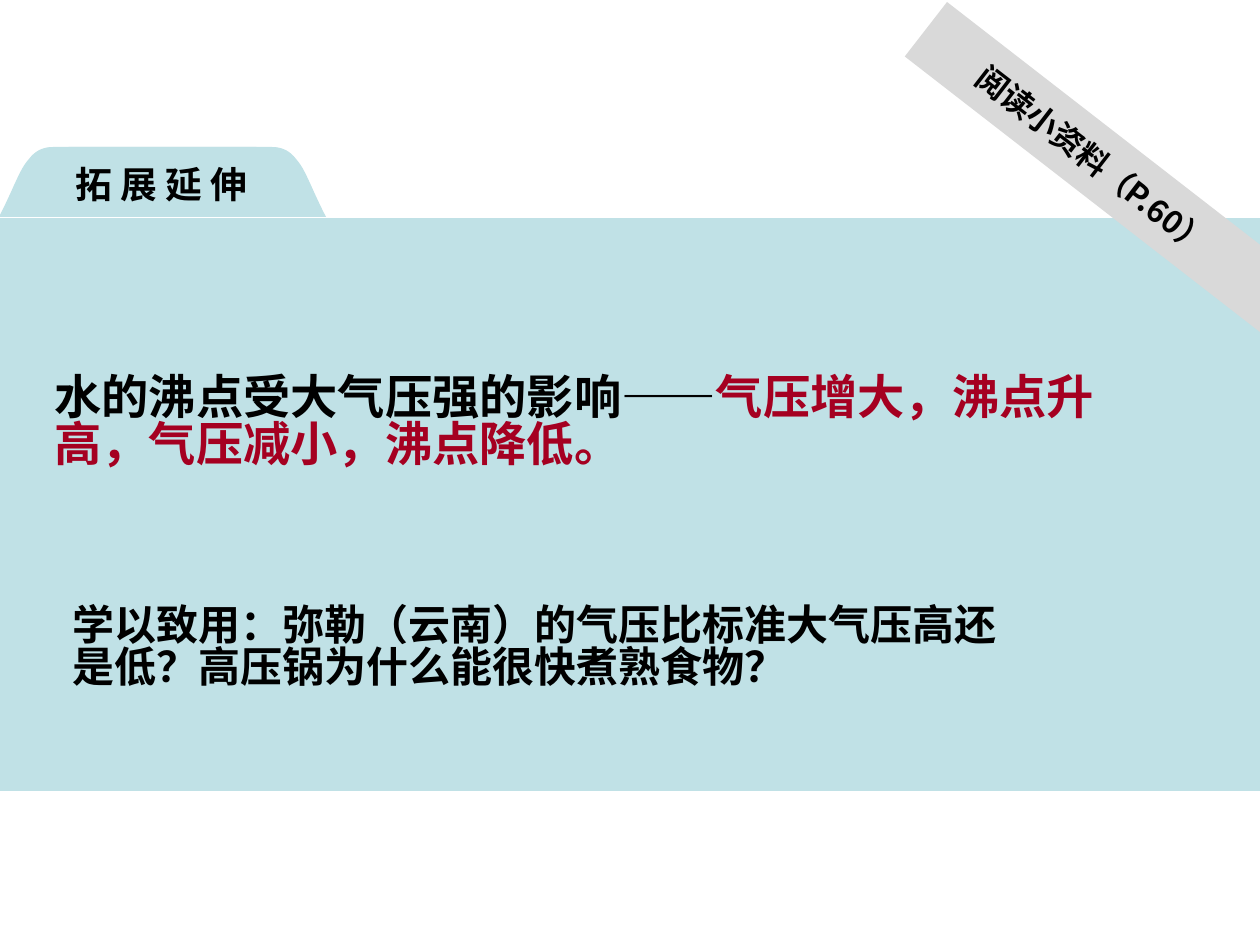
from lxml.etree import SubElement
from pptx import Presentation
from pptx.dml.color import RGBColor
from pptx.enum.shapes import MSO_SHAPE as Shape
from pptx.enum.text import MSO_ANCHOR as Anchor, PP_ALIGN as Align
from pptx.oxml.ns import qn
from pptx.util import Emu, Pt

PX = 914400 / 126
COLORS = {"panel": "C0E1E6", "ribbon": "D9D9D9", "text": "000000", "accent": "A50021"}
CJK = "Noto Sans CJK SC"
CURVE_STEPS = 12


def px(n):
    return Emu(round(n * PX))


def paint(sp, color):
    sp.shadow.inherit = False
    sp.fill.solid()
    sp.fill.fore_color.rgb = RGBColor.from_string(COLORS[color])
    sp.line.fill.background()


def add_run(p, text, size, color="text", font="Arial"):
    r = p.add_run()
    r.text = text
    r.font.size, r.font.bold, r.font.name = Pt(size), True, font
    r.font.color.rgb = RGBColor.from_string(COLORS[color])
    SubElement(r.font._element, qn("a:ea"), typeface=CJK)


def add_rect(slide, box, color):
    sp = slide.shapes.add_shape(Shape.RECTANGLE, *map(px, box))
    paint(sp, color)
    return sp


def add_text(slide, box, size, runs):
    """Place one paragraph of (text, color) runs, with tightened CJK lines."""
    tf = slide.shapes.add_textbox(*map(px, box)).text_frame
    tf.word_wrap = True
    tf.margin_top = px(12)
    p = tf.paragraphs[0]
    p.line_spacing = 0.83
    for text, color in runs:
        add_run(p, text, size, color)


def bezier(p0, p1, p2, p3):
    """Points along a cubic curve, without its start."""
    points = []
    for i in range(1, CURVE_STEPS + 1):
        t = i / CURVE_STEPS
        u = 1 - t
        points.append(tuple(
            u**3 * a + 3 * u * u * t * b + 3 * u * t * t * c + t**3 * d
            for a, b, c, d in zip(p0, p1, p2, p3)))
    return points


def add_tab(slide, box):
    """Two mirrored, overlapping halves form the tab, with its label on top."""
    left, top, width, height = box
    outline = [(56, 0), (257, 0)]
    outline += bezier((257, 0), (264, 0), (269, 5), (269, 12))
    outline += [(269, height), (0, height)]
    outline += bezier((0, height), (15, 41), (20, 23), (30, 12))
    outline += bezier((30, 12), (39, 0), (50, 0), (56, 0))
    for mirrored in (False, True):
        points = [(round((left + (width - x if mirrored else x)) * PX),
                   round((top + y) * PX)) for x, y in outline]
        builder = slide.shapes.build_freeform(*points[0], scale=1.0)
        builder.add_line_segments(points[1:], close=True)
        paint(builder.convert_to_shape(), "panel")
    add_text(slide, (left + 64, top + 10, 220, 57), 21, [("拓 展 延 伸", "text")])


def add_ribbon(slide, box):
    sp = add_rect(slide, box, "ribbon")
    sp.rotation = 37.8
    tf = sp.text_frame
    tf.vertical_anchor = Anchor.MIDDLE
    tf.margin_left = px(70)
    p = tf.paragraphs[0]
    p.alignment = Align.LEFT
    add_run(p, "阅读小资料（P.60）", 18, font=CJK)


def add_body(slide, box):
    left, top, _, _ = box
    add_text(slide, (left + 60, top + 377, 989, 115), 24, [
        ("学以致用：弥勒（云南）的气压比标准大气压高还是低？高压锅为什么能很快煮熟食物？", "text")])
    add_text(slide, (left + 42, top + 147, 1076, 127), 27, [
        ("水的沸点受大气压强的影响——", "text"),
        ("气压增大，沸点升高，气压减小，沸点降低。", "accent")])


def main():
    prs = Presentation()
    prs.slide_width, prs.slide_height = px(1260), px(945)
    slide = prs.slides.add_slide(prs.slide_layouts[6])
    panel = (0, 218, 1260, 573)
    add_rect(slide, panel, "panel")
    add_ribbon(slide, (871, 155, 523, 69))
    add_tab(slide, (-1, 147, 327, 70))
    add_body(slide, panel)
    prs.save("out.pptx")


if __name__ == "__main__":
    main()
